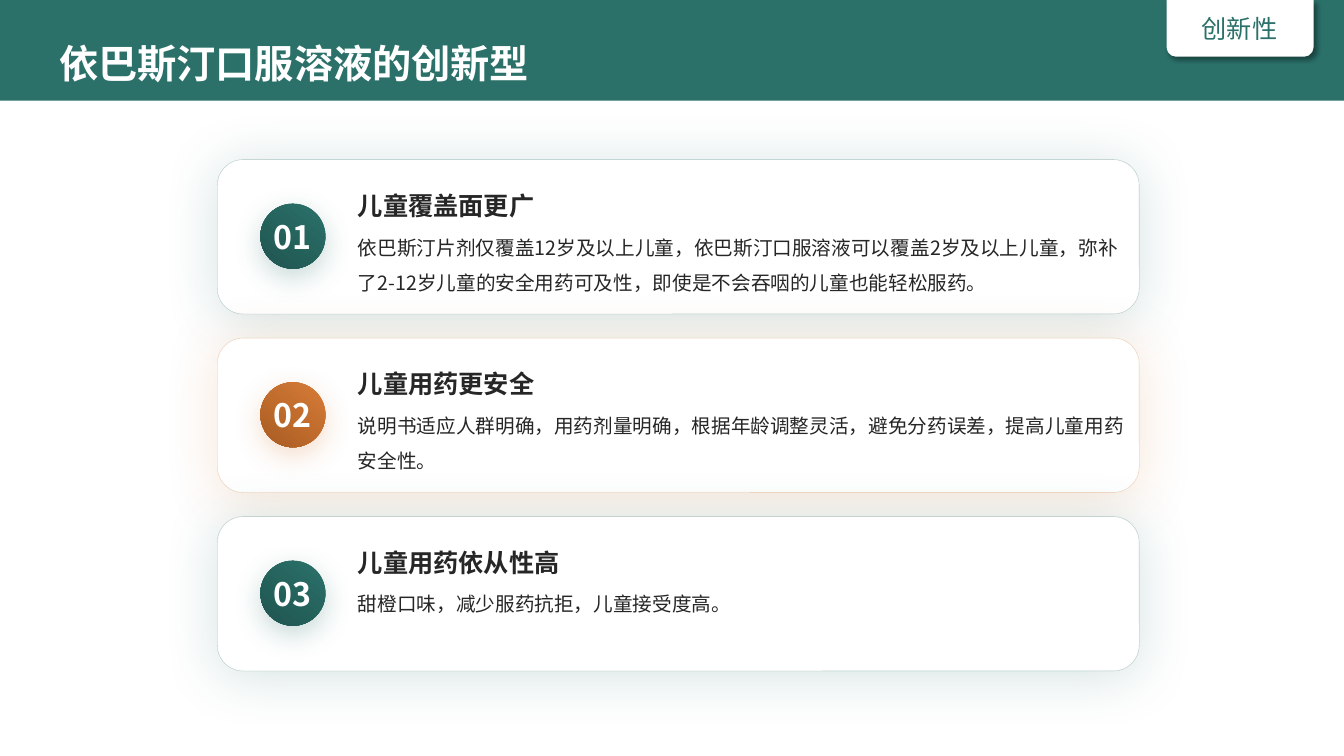
from lxml import etree
from pptx import Presentation
from pptx.dml.color import RGBColor
from pptx.enum.shapes import MSO_SHAPE
from pptx.enum.text import MSO_ANCHOR, PP_ALIGN
from pptx.oxml.ns import qn
from pptx.util import Emu, Pt

RECT, TAB = MSO_SHAPE.RECTANGLE, MSO_SHAPE.ROUND_2_SAME_RECTANGLE
ROUNDED, OVAL = MSO_SHAPE.ROUNDED_RECTANGLE, MSO_SHAPE.OVAL
TOP, MIDDLE, BOTTOM = MSO_ANCHOR.TOP, MSO_ANCHOR.MIDDLE, MSO_ANCHOR.BOTTOM
LEFT, CENTER = PP_ALIGN.LEFT, PP_ALIGN.CENTER

EMU_PER_PX = 9525
CJK_FONT, LATIN_FONT = "Noto Sans CJK SC", "Arial"
GREEN, DARK_GREEN = "2B716A", "205550"
ORANGE, DARK_ORANGE = "D77C38", "A95C22"
WHITE, BLACK, INK = "FFFFFF", "000000", "262626"

CARD_LEFT, CARD_TOP, CARD_WIDTH, CARD_HEIGHT = 207, 152, 878, 147
CARD_PITCH = 170
TEXT_LEFT, TEXT_WIDTH = 341, 732

CARDS = [
    ("儿童覆盖面更广",
     "依巴斯汀片剂仅覆盖12岁及以上儿童，依巴斯汀口服溶液可以覆盖2岁及以上儿童，"
     "弥补了2-12岁儿童的安全用药可及性，即使是不会吞咽的儿童也能轻松服药。",
     GREEN, DARK_GREEN),
    ("儿童用药更安全",
     "说明书适应人群明确，用药剂量明确，根据年龄调整灵活，避免分药误差，提高儿童用药安全性。",
     ORANGE, DARK_ORANGE),
    ("儿童用药依从性高", "甜橙口味，减少服药抗拒，儿童接受度高。", GREEN, DARK_GREEN),
]


def px(*lengths):
    return [Emu(length * EMU_PER_PX) for length in lengths]


def rgb(color):
    return RGBColor.from_string(color)


def set_alpha(fill_owner, percent):
    """Make the solid colour below this element partly transparent."""
    color = next(fill_owner.iter(qn("a:srgbClr")))
    etree.SubElement(color, qn("a:alpha"), val=str(percent * 1000))


def add_block(slide, kind, box, fill):
    block = slide.shapes.add_shape(kind, *px(*box))
    block.shadow.inherit = False
    block.fill.solid()
    block.fill.fore_color.rgb = rgb(fill)
    block.line.fill.background()
    return block


def cast_shadow(block, color, alpha, blur, distance, angle):
    effects = block._element.spPr.find(qn("a:effectLst"))
    shadow = etree.SubElement(
        effects, qn("a:outerShdw"), blurRad=str(Pt(blur)), dist=str(Pt(distance)),
        dir=str(angle * 60000), algn="t", rotWithShape="0")
    etree.SubElement(shadow, qn("a:srgbClr"), val=color)
    set_alpha(shadow, alpha)


def write(block, text, size, color, font=CJK_FONT, bold=False, align=LEFT,
          anchor=TOP, spacing=None, wrap=True, inset=True):
    frame = block.text_frame
    frame.word_wrap = wrap
    frame.vertical_anchor = anchor
    if not inset:
        frame.margin_left = frame.margin_right = 0
        frame.margin_top = frame.margin_bottom = 0
    paragraph = frame.paragraphs[0]
    paragraph.alignment = align
    paragraph.line_spacing = spacing
    run = paragraph.add_run()
    run.text = text
    run.font.name = font
    run.font.size = Pt(size)
    run.font.bold = bold
    run.font.color.rgb = rgb(color)
    etree.SubElement(run.font._element, qn("a:ea"), typeface=CJK_FONT)


def add_text(slide, box, text, size, color, **style):
    write(slide.shapes.add_textbox(*px(*box)), text, size, color, **style)


def add_panel(slide, top, accent):
    panel = add_block(slide, ROUNDED, (CARD_LEFT, top, CARD_WIDTH, CARD_HEIGHT), WHITE)
    panel.line.color.rgb = rgb(accent)
    panel.line.width = Pt(0.25)
    set_alpha(panel.line._ln, 20)
    return panel


def add_badge(slide, top, number, accent, dark):
    badge = add_block(slide, OVAL, (248, top, 62, 62), accent)
    badge.fill.gradient()
    badge.fill.gradient_angle = 232
    for stop, color in zip(badge.fill.gradient_stops, (accent, dark)):
        stop.color.rgb = rgb(color)
    cast_shadow(badge, accent, 25, 20, 6, 90)
    write(badge, f"{number:02d}", 23, WHITE, bold=True, align=CENTER,
          anchor=MIDDLE, wrap=False, inset=False)


def add_card(slide, number, heading, body, accent, dark):
    top = CARD_TOP + (number - 1) * CARD_PITCH

    # Shadowed panel under a translucent one
    cast_shadow(add_panel(slide, top, accent), accent, 20, 40, 4, 90)
    veil = add_panel(slide, top, accent)
    set_alpha(veil.fill._xPr.find(qn("a:solidFill")), 20)

    # Number, body and heading
    add_badge(slide, top + 42, number, accent, dark)
    add_text(slide, (TEXT_LEFT, top + 61, TEXT_WIDTH, 77), body, 14, INK,
             spacing=1.5, inset=False)
    add_text(slide, (TEXT_LEFT, top + 10, TEXT_WIDTH, 48), heading, 18, INK,
             bold=True, anchor=BOTTOM, inset=False)


def add_header(slide):
    add_block(slide, RECT, (0, 0, 1280, 96), GREEN)
    add_text(slide, (47, 7, 1046, 112), "依巴斯汀口服溶液的创新型", 28, WHITE,
             font=LATIN_FONT, bold=True, anchor=MIDDLE, spacing=0.9)

    # Section tab hanging from the top edge
    tab = add_block(slide, TAB, (1111, 0, 140, 54), WHITE)
    tab.rotation = 180
    cast_shadow(tab, BLACK, 40, 4, 3, 45)
    add_text(slide, (1135, 8, 91, 38), "创新性", 18, GREEN,
             font=LATIN_FONT, align=CENTER, wrap=False)


def main():
    deck = Presentation()
    deck.slide_width, deck.slide_height = px(1280, 720)
    slide = deck.slides.add_slide(deck.slide_layouts[6])
    add_header(slide)
    for number, card in enumerate(CARDS, 1):
        add_card(slide, number, *card)
    deck.save("out.pptx")


if __name__ == "__main__":
    main()
